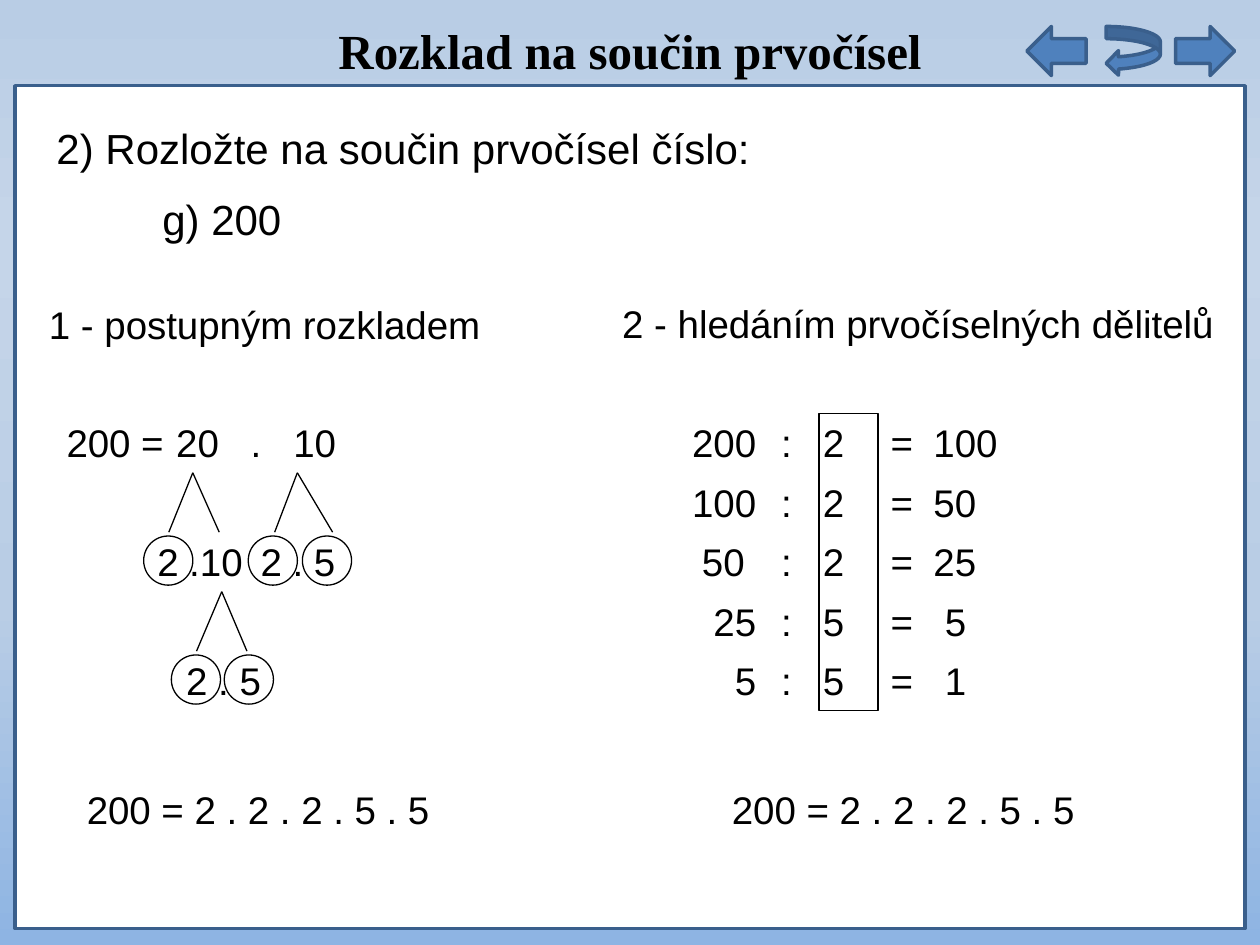
import pptx
import pptx.dml.color
import pptx.enum.shapes
import pptx.enum.text
import pptx.oxml
import pptx.oxml.ns
import pptx.util
from lxml import etree

RGB = pptx.dml.color.RGBColor
Inches, Pt = pptx.util.Inches, pptx.util.Pt
SHAPE = pptx.enum.shapes.MSO_SHAPE
ALIGN = pptx.enum.text.PP_ALIGN
qn = pptx.oxml.ns.qn

BLACK, WHITE = RGB(0, 0, 0), RGB(255, 255, 255)
BLUE, DARK_BLUE = RGB(0x4F, 0x81, 0xBD), RGB(0x3A, 0x5F, 0x8C)
SKY = [(0, RGB(0xB9, 0xCD, 0xE5)), (25, RGB(0xC5, 0xD5, 0xE9)),
       (64, RGB(0xB9, 0xCD, 0xE5)), (100, RGB(0x8E, 0xB4, 0xE3))]

TITLE = "Rozklad na součin prvočísel"
TASK = ["2) Rozložte na součin prvočísel číslo:", "g) 200"]
TASK_INDENT = 0.84
RESULT = "200 = 2 . 2 . 2 . 5 . 5"

# Working area: five equal rows
TOP, HEIGHT = 3.28, 2.36
ROW = HEIGHT / 5
DIGIT, INSET = 0.09, 0.1  # indent of about one character, text box inset

# left, top, width, text, wrap
HEADINGS = [
    (0.29, 2.34, 5.12, "1 - postupným rozkladem", True),
    (4.84, 2.33, 4.96, "2 - hledáním prvočíselných dělitelů", False),
]
RESULTS_TOP, RESULTS_WIDTH, RESULTS_LEFT = 6.19, 2.99, [0.59, 5.71]

# row, left, width, text, tab stops
TREE_TEXTS = [
    (0, 0.43, 1.10, "200 =", []),
    (0, 1.30, 1.58, "20\t.\t10", [0.59, 0.93]),
    (2, 1.15, 1.34, "2 .10", []),
    (2, 1.97, 1.16, "2 . 5", []),
    (4, 1.38, 1.34, "2 . 5", []),
]
# row, x of the parent, x of both children
BRANCHES = [(1, 1.53, (1.34, 1.74)), (1, 2.36, (2.18, 2.64)), (3, 1.76, (1.56, 1.96))]
# row, left edges of the circled primes
PRIMES = [(2, [1.14, 1.97, 2.40]), (4, [1.36, 1.78])]
CIRCLE = 0.39

# dividend, its indent, divisor, quotient, its indent
DIVISIONS = [
    ("200", 0, "2", "100", 0),
    ("100", 0, "2", "50", 0),
    ("50", DIGIT, "2", "25", 0),
    ("25", 0, "5", "5", DIGIT),
    ("5", 0, "5", "1", DIGIT),
]
DIVIDEND_LEFT, DIVISOR_LEFT, QUOTIENT_LEFT = 5.31, 6.10, 6.97
DIVISION_COLUMN, COLON_WIDTH, QUOTIENT_WIDTH, QUOTIENT_TAB = 0.79, 0.39, 1.18, 0.34

NAV_TOP, NAV_HEIGHT = 0.21, 0.39
NAVIGATION = [(SHAPE.LEFT_ARROW, 8.15, 0.47), (SHAPE.CURVED_LEFT_ARROW, 8.78, 0.43),
              (SHAPE.RIGHT_ARROW, 9.33, 0.47)]

BODY = {"name": "Arial", "size": Pt(22)}
TASK_FONT = {"name": "Arial", "size": Pt(24)}
TITLE_FONT = {"name": "Times New Roman", "size": Pt(28), "bold": True}


def row_top(row):
    return TOP + row * ROW


def format_font(paragraph, values):
    for name, value in values.items():
        setattr(paragraph.font, name, value)
    paragraph.font.color.rgb = BLACK


def add_text(slide, left, top, width, lines, font=BODY, align=ALIGN.LEFT,
             right_indent=0, tabs=(), wrap=True):
    box = slide.shapes.add_textbox(*map(Inches, (left, top, width, ROW)))
    frame = box.text_frame
    frame.word_wrap = wrap
    frame.auto_size = pptx.enum.text.MSO_AUTO_SIZE.SHAPE_TO_FIT_TEXT
    frame.margin_right = Inches(INSET + right_indent)
    frame.text = "\n".join(lines)
    for paragraph in frame.paragraphs:
        paragraph.alignment = align
        if tabs:
            stops = etree.Element(qn("a:tabLst"))
            for position in tabs:
                etree.SubElement(stops, qn("a:tab"), pos=str(Inches(position)), algn="l")
            paragraph._p.get_or_add_pPr().append(stops)
        format_font(paragraph, font)
    return box


def add_outline(slide, kind, left, top, width, height, line=BLACK, weight=0.75, fill=None):
    shape = slide.shapes.add_shape(kind, *map(Inches, (left, top, width, height)))
    shape.shadow.inherit = False
    shape.line.color.rgb = line
    shape.line.width = Pt(weight)
    if fill is None:
        shape.fill.background()
    else:
        shape.fill.solid()
        shape.fill.fore_color.rgb = fill


def add_branch(slide, start, end):
    branch = slide.shapes.add_connector(
        pptx.enum.shapes.MSO_CONNECTOR.STRAIGHT, *map(Inches, start + end))
    branch.line.color.rgb = BLACK
    branch.line.width = Pt(0.75)
    etree.SubElement(branch._element.spPr, qn("a:effectLst"))


def paint_background(slide):
    fill = slide.background.fill
    fill.gradient()
    fill.gradient_angle = 270
    stops = slide._element.find(".//" + qn("a:gsLst"))
    for stop in list(stops):
        stops.remove(stop)
    for percent, color in SKY:
        stop = etree.SubElement(stops, qn("a:gs"), pos=str(percent * 1000))
        etree.SubElement(stop, qn("a:srgbClr"), val=str(color))


def add_title(slide):
    title = slide.shapes.title
    title.left, title.top, title.width, title.height = map(Inches, (0.12, 0.11, 9.76, 0.57))
    title.text_frame.text = TITLE
    paragraph = title.text_frame.paragraphs[0]
    paragraph.alignment = ALIGN.CENTER
    format_font(paragraph, TITLE_FONT)


def add_factor_tree(slide):
    for row, left, width, text, tabs in TREE_TEXTS:
        add_text(slide, left, row_top(row), width, [text], tabs=tabs)
    for row, parent, children in BRANCHES:
        for child in children:
            add_branch(slide, (parent, row_top(row)), (child, row_top(row + 1)))
    for row, lefts in PRIMES:
        for left in lefts:
            add_outline(slide, SHAPE.OVAL, left, row_top(row) + 0.03, CIRCLE, CIRCLE)


def add_divisions(slide):
    for row, (dividend, shift, divisor, quotient, indent) in enumerate(DIVISIONS):
        top = row_top(row)
        add_text(slide, DIVIDEND_LEFT, top, DIVISION_COLUMN, [dividend],
                 align=ALIGN.RIGHT, right_indent=shift)
        add_text(slide, DIVISOR_LEFT, top, COLON_WIDTH, [":"])
        add_text(slide, DIVISOR_LEFT, top, DIVISION_COLUMN, [divisor],
                 align=ALIGN.RIGHT, right_indent=DIGIT)
        add_text(slide, QUOTIENT_LEFT, top, QUOTIENT_WIDTH, ["=\t" + quotient],
                 tabs=[QUOTIENT_TAB + indent])
    add_outline(slide, SHAPE.RECTANGLE, 6.5, TOP, 0.47, HEIGHT)


def main():
    deck = pptx.Presentation()
    deck.slide_width, deck.slide_height = Inches(10), Inches(7.5)
    slide = deck.slides.add_slide(deck.slide_layouts[5])
    paint_background(slide)
    add_title(slide)
    add_outline(slide, SHAPE.RECTANGLE, 0.12, 0.68, 9.76, 6.69, DARK_BLUE, 2, WHITE)

    task = add_text(slide, 0.35, 0.92, 8.84, TASK, TASK_FONT)
    question, number = task.text_frame.paragraphs
    question.space_after = Pt(12)
    number._p.get_or_add_pPr().set("marL", str(Inches(TASK_INDENT)))

    for left, top, width, text, wrap in HEADINGS:
        add_text(slide, left, top, width, [text], wrap=wrap)
    add_factor_tree(slide)
    add_divisions(slide)
    for left in RESULTS_LEFT:
        add_text(slide, left, RESULTS_TOP, RESULTS_WIDTH, [RESULT])
    for kind, left, width in NAVIGATION:
        add_outline(slide, kind, left, NAV_TOP, width, NAV_HEIGHT, DARK_BLUE, 2, BLUE)
    deck.save("out.pptx")


if __name__ == "__main__":
    main()
